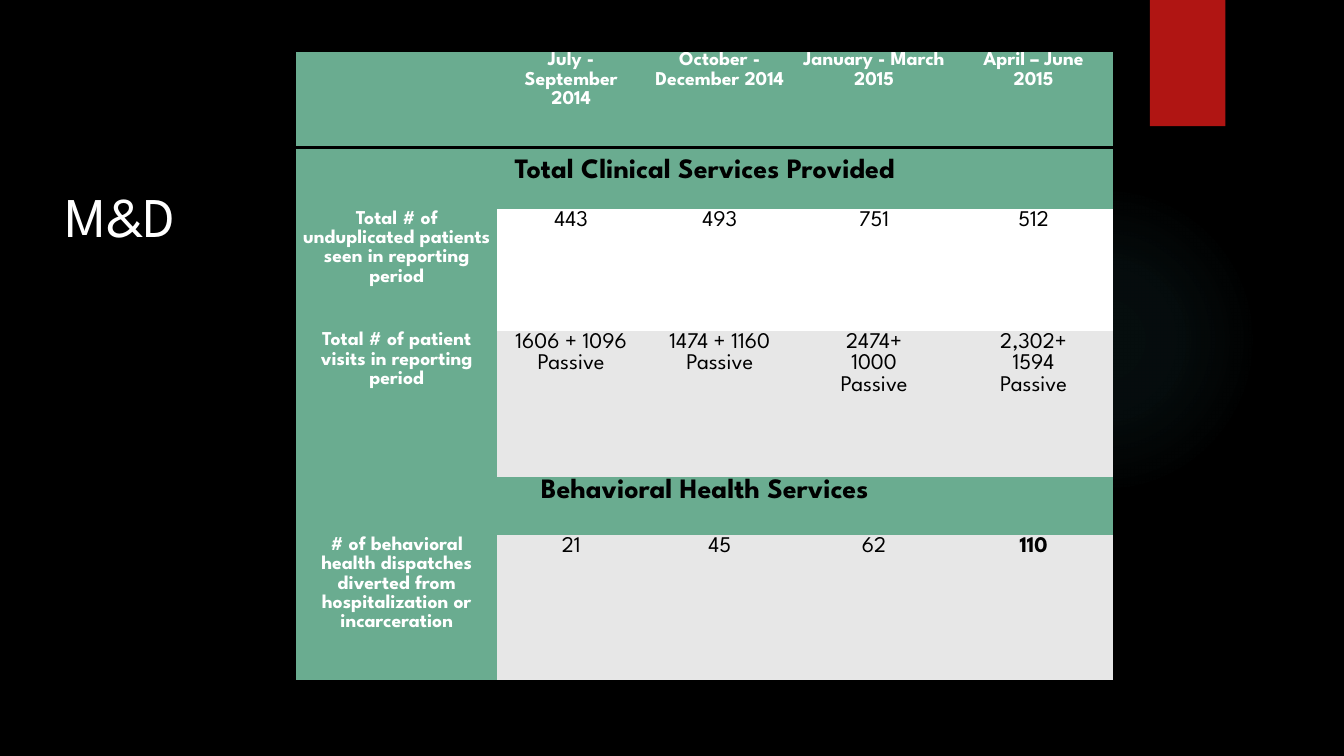
"""Build the M&D quarterly services slide."""
from lxml import etree
from pptx import Presentation
from pptx.dml.color import RGBColor
from pptx.enum.shapes import MSO_SHAPE
from pptx.enum.text import PP_ALIGN
from pptx.oxml import parse_xml
from pptx.oxml.ns import nsdecls, qn
from pptx.util import Cm, Pt

OVAL, RECTANGLE = MSO_SHAPE.OVAL, MSO_SHAPE.RECTANGLE
CENTER, LEFT = PP_ALIGN.CENTER, PP_ALIGN.LEFT
COLORS = {"black": "000000", "white": "FFFFFF", "green": "6AAC90",
          "gray": "E7E7E7", "red": "B01513", "glow": "50B9C1"}
FONT = "League Spartan"
PLAIN_TABLE = "{2D5ABB26-0587-4C30-8999-92F81FD0307C}"
GLOW_STOPS = [(0, 7), (36, 6), (69, 0)]
COLUMN_WIDTHS = [5.06, 3.73, 3.76, 4.02, 4.02]
ROW_HEIGHTS = [2.44, 1.55, 3.07, 3.68, 1.47, 3.68]
ROWS = [
    ["", "July - September 2014", "October - December 2014",
     "January - March\n2015", "April – June\n2015"],
    ["Total Clinical Services Provided"],
    ["Total # of unduplicated patients seen in reporting period",
     "443", "493", "751", "512"],
    ["Total # of patient visits in reporting period",
     "1606 + 1096 Passive", "1474 + 1160 Passive",
     "2474+\n1000\nPassive", "2,302+\n1594\nPassive"],
    ["Behavioral Health Services"],
    ["# of behavioral health dispatches diverted from hospitalization or incarceration",
     "21", "45", "62", "110"],
]
HEADER_ROW, PATIENTS_ROW, LAST_ROW = 0, 2, len(ROWS) - 1


def color(name):
    return RGBColor.from_string(COLORS[name])


def write_text(frame, text, size=16, ink="black", bold=False, align=CENTER, spacing=1.07):
    for index, line in enumerate(text.split("\n")):
        paragraph = frame.add_paragraph() if index else frame.paragraphs[0]
        paragraph.alignment = align
        paragraph.line_spacing = spacing
        paragraph.font.size = Pt(size)
        run = paragraph.add_run()
        run.text = line
        run.font.name, run.font.size, run.font.bold = FONT, Pt(size), bold
        run.font.color.rgb = color(ink)


class SlideBuilder:
    def __init__(self, presentation):
        self.slide = presentation.slides.add_slide(presentation.slide_layouts[6])
        self.slide.background.fill.solid()
        self.slide.background.fill.fore_color.rgb = color("black")

    def add_block(self, kind, left, top, width, height, fill):
        shape = self.slide.shapes.add_shape(kind, Cm(left), Cm(top), Cm(width), Cm(height))
        shape.shadow.inherit = False
        shape.fill.solid()
        shape.fill.fore_color.rgb = color(fill)
        shape.line.fill.background()
        return shape

    def add_glow(self, left, top, size):
        shape = self.add_block(OVAL, left, top, size, size, "glow")
        stops = "".join(
            f'<a:gs pos="{position * 1000}"><a:srgbClr val="{COLORS["glow"]}">'
            f'<a:alpha val="{alpha * 1000}"/></a:srgbClr></a:gs>'
            for position, alpha in GLOW_STOPS)
        gradient = parse_xml(
            f'<a:gradFill {nsdecls("a")}><a:gsLst>{stops}</a:gsLst><a:path path="circle">'
            '<a:fillToRect l="50000" t="50000" r="50000" b="50000"/></a:path></a:gradFill>')
        properties = shape.element.spPr
        properties.replace(properties.find(qn("a:solidFill")), gradient)

    def add_title(self, text, left, top, width, height):
        box = self.slide.shapes.add_textbox(Cm(left), Cm(top), Cm(width), Cm(height))
        box.text_frame.word_wrap = True
        write_text(box.text_frame, text, size=40, ink="white", align=LEFT, spacing=1)

    def add_border(self, cell, sides):
        properties = cell._tc.get_or_add_tcPr()
        for index, side in enumerate(sides):
            line = etree.Element(qn(f"a:ln{side}"), w=str(Pt(2)))
            fill = etree.SubElement(line, qn("a:solidFill"))
            etree.SubElement(fill, qn("a:srgbClr"), val=COLORS["black"])
            properties.insert(index, line)

    def fill_cell(self, cell, text, fill, **text_format):
        cell.margin_left = cell.margin_right = Cm(0.16)
        cell.margin_top = cell.margin_bottom = 0
        cell.fill.solid()
        cell.fill.fore_color.rgb = color(fill)
        if text:
            write_text(cell.text_frame, text, **text_format)

    def add_services_table(self, left, top):
        frame = self.slide.shapes.add_table(
            len(ROWS), len(COLUMN_WIDTHS), Cm(left), Cm(top),
            Cm(sum(COLUMN_WIDTHS)), Cm(sum(ROW_HEIGHTS)))
        table = frame.table
        table._tbl.tblPr.find(qn("a:tableStyleId")).text = PLAIN_TABLE
        for column, width in zip(table.columns, COLUMN_WIDTHS):
            column.width = Cm(width)
        for row_index, texts in enumerate(ROWS):
            table.rows[row_index].height = Cm(ROW_HEIGHTS[row_index])
            is_section = len(texts) == 1
            if is_section:
                table.cell(row_index, 0).merge(table.cell(row_index, len(COLUMN_WIDTHS) - 1))
            for column_index, text in enumerate(texts):
                cell = table.cell(row_index, column_index)
                if is_section:
                    self.fill_cell(cell, text, "green", size=20, bold=True)
                elif row_index == HEADER_ROW or column_index == 0:
                    self.fill_cell(cell, text, "green", size=14, ink="white", bold=True)
                else:
                    fill = "white" if row_index == PATIENTS_ROW else "gray"
                    self.fill_cell(cell, text, fill, bold=text == "110")
                if row_index == HEADER_ROW:
                    self.add_border(cell, "TB")
                elif row_index == LAST_ROW:
                    self.add_border(cell, "B")
        table.cell(1, 0).margin_top = Cm(0.25)


def main():
    presentation = Presentation()
    presentation.slide_width, presentation.slide_height = Cm(33.87), Cm(19.05)
    builder = SlideBuilder(presentation)
    builder.add_glow(23.9, 4.65, 7.82)
    builder.add_block(RECTANGLE, 28.98, 0, 1.9, 3.18, "red")
    builder.add_services_table(7.47, 1.28)
    builder.add_title("M&D", 1.4, 4.45, 4.83, 1.96)
    presentation.save("out.pptx")


if __name__ == "__main__":
    main()
